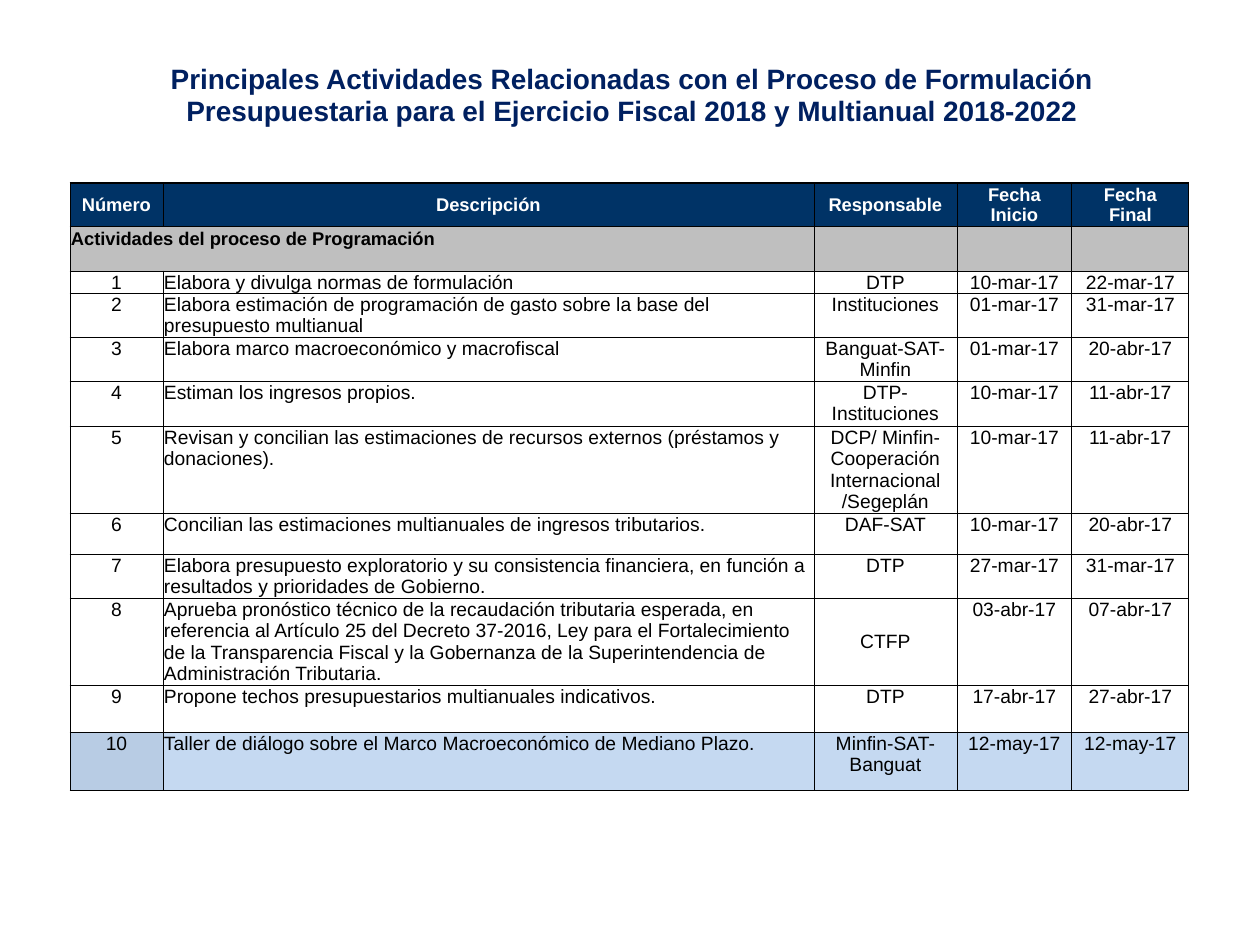
from typing import NamedTuple

from lxml.etree import SubElement
from pptx import Presentation
from pptx.dml.color import RGBColor
from pptx.enum.text import MSO_ANCHOR, PP_ALIGN
from pptx.oxml.ns import qn
from pptx.util import Emu, Pt

FONT = "Arial"
NAVY = RGBColor(0x00, 0x20, 0x60)
HEADER_BLUE = RGBColor(0x00, 0x33, 0x66)
GRAY = RGBColor(0xBF, 0xBF, 0xBF)
NUMBER_BLUE = RGBColor(0xB8, 0xCC, 0xE4)
LIGHT_BLUE = RGBColor(0xC5, 0xD9, 0xF1)
WHITE = RGBColor(0xFF, 0xFF, 0xFF)
BLACK = RGBColor(0x00, 0x00, 0x00)

EMU_PER_PX = 914400 / 126
THIN, THICK = Pt(0.5), Pt(1)
HEADING_SIZE, HEADING_LEADING = 10.5, 11.8
BODY_SIZE, BODY_LEADING = 11, 12.2
COLUMN_WIDTHS = (93, 651, 143, 115, 117)
HEADER_HEIGHT, SECTION_HEIGHT = 43, 45

TITLE = ("Principales Actividades Relacionadas con el Proceso de Formulación "
         "Presupuestaria para el Ejercicio Fiscal 2018 y Multianual 2018-2022")
HEADINGS = ("Número", "Descripción", "Responsable", "Fecha\vInicio", "Fecha\vFinal")
SECTION = "Actividades del proceso de Programación"


class Activity(NamedTuple):
    height: int
    description: str
    responsible: str
    start: str
    end: str
    responsible_anchor: MSO_ANCHOR = MSO_ANCHOR.TOP
    number_fill: RGBColor = WHITE
    fill: RGBColor = WHITE


ACTIVITIES = (
    Activity(22, "Elabora y divulga normas de formulación",
             "DTP", "10-mar-17", "22-mar-17"),
    Activity(44, "Elabora estimación de programación de gasto sobre la base del "
             "presupuesto multianual", "Instituciones", "01-mar-17", "31-mar-17"),
    Activity(44, "Elabora marco macroeconómico y macrofiscal",
             "Banguat-SAT-Minfin", "01-mar-17", "20-abr-17"),
    Activity(45, "Estiman los ingresos propios.",
             "DTP-Instituciones", "10-mar-17", "11-abr-17"),
    Activity(87, "Revisan y concilian las estimaciones de recursos externos "
             "(préstamos y donaciones).",
             "DCP/ Minfin- Cooperación Internacional /Segeplán",
             "10-mar-17", "11-abr-17"),
    Activity(41, "Concilian las estimaciones multianuales de ingresos tributarios.",
             "DAF-SAT", "10-mar-17", "20-abr-17"),
    Activity(44, "Elabora presupuesto exploratorio y su consistencia financiera, "
             "en función a resultados y prioridades de Gobierno.",
             "DTP", "27-mar-17", "31-mar-17"),
    Activity(87, "Aprueba pronóstico técnico de la recaudación tributaria esperada, "
             "en referencia al Artículo 25 del Decreto 37-2016, Ley para el "
             "Fortalecimiento de la Transparencia Fiscal y la Gobernanza de la "
             "Superintendencia de Administración Tributaria.",
             "CTFP", "03-abr-17", "07-abr-17", MSO_ANCHOR.MIDDLE),
    Activity(47, "Propone techos presupuestarios multianuales indicativos.",
             "DTP", "17-abr-17", "27-abr-17"),
    Activity(58, "Taller de diálogo sobre el Marco Macroeconómico de Mediano Plazo.",
             "Minfin-SAT-Banguat", "12-may-17", "12-may-17",
             number_fill=NUMBER_BLUE, fill=LIGHT_BLUE),
)


def px(length: int) -> Emu:
    return Emu(round(length * EMU_PER_PX))


def write(frame, text: str, *, size: float = BODY_SIZE, leading: float = BODY_LEADING,
          color: RGBColor = BLACK, bold: bool = False,
          align: PP_ALIGN = PP_ALIGN.CENTER) -> None:
    frame.word_wrap = True
    para = frame.paragraphs[0]
    para.text = text
    para.alignment = align
    para.line_spacing = Pt(leading)
    for span in para.runs:
        span.font.name, span.font.size, span.font.bold = FONT, Pt(size), bold
        span.font.color.rgb = color


def add_borders(cell, widths: dict[str, int]) -> None:
    """Draw black borders; they must be added before the cell's fill."""
    properties = cell._tc.get_or_add_tcPr()
    for side, width in widths.items():
        line = SubElement(properties, qn(f"a:ln{side}"), w=str(width))
        fill = SubElement(line, qn("a:solidFill"))
        SubElement(fill, qn("a:srgbClr"), val=str(BLACK))


def fill_cell(cell, text: str, *, fill: RGBColor,
              anchor: MSO_ANCHOR = MSO_ANCHOR.TOP, top: int = 1, **text_format) -> None:
    cell.margin_left = cell.margin_right = px(1)
    cell.margin_top, cell.margin_bottom = px(top), 0
    cell.vertical_anchor = anchor
    cell.fill.solid()
    cell.fill.fore_color.rgb = fill
    write(cell.text_frame, text, **text_format)


def add_title(slide) -> None:
    box = slide.shapes.add_textbox(px(65), px(16), px(1134), px(158))
    box.text_frame.vertical_anchor = MSO_ANCHOR.MIDDLE
    write(box.text_frame, TITLE, size=16, leading=18.6, color=NAVY, bold=True)


def add_schedule(slide) -> None:
    heights = (HEADER_HEIGHT, SECTION_HEIGHT, *(item.height for item in ACTIVITIES))
    table = slide.shapes.add_table(
        len(heights), len(COLUMN_WIDTHS), px(70), px(183),
        px(sum(COLUMN_WIDTHS)), px(sum(heights))).table
    table.horz_banding = table.first_row = False
    for column, width in zip(table.columns, COLUMN_WIDTHS):
        column.width = px(width)
    for row_index, height in enumerate(heights):
        table.rows[row_index].height = px(height)
        top_width = THIN if row_index else THICK
        for cell in table.rows[row_index].cells:
            add_borders(cell, {"L": THIN, "R": THIN, "T": top_width, "B": THIN})

    heading_format = {"size": HEADING_SIZE, "leading": HEADING_LEADING, "bold": True}
    for column_index, heading in enumerate(HEADINGS):
        fill_cell(table.cell(0, column_index), heading, fill=HEADER_BLUE,
                  anchor=MSO_ANCHOR.MIDDLE, color=WHITE, **heading_format)
        fill_cell(table.cell(1, column_index), "" if column_index else SECTION,
                  fill=GRAY, top=3, align=PP_ALIGN.LEFT, **heading_format)
    table.cell(1, 0).merge(table.cell(1, 1))

    for number, item in enumerate(ACTIVITIES, start=1):
        row_index = number + 1
        fill_cell(table.cell(row_index, 0), str(number), fill=item.number_fill)
        fill_cell(table.cell(row_index, 1), item.description, fill=item.fill,
                  align=PP_ALIGN.LEFT)
        fill_cell(table.cell(row_index, 2), item.responsible, fill=item.fill,
                  anchor=item.responsible_anchor)
        for column_index, date in enumerate((item.start, item.end), start=3):
            fill_cell(table.cell(row_index, column_index), date, fill=item.fill)


def main() -> None:
    deck = Presentation()
    deck.slide_width, deck.slide_height = px(1260), px(945)
    slide = deck.slides.add_slide(deck.slide_layouts[6])
    add_title(slide)
    add_schedule(slide)
    deck.save("out.pptx")


if __name__ == "__main__":
    main()
